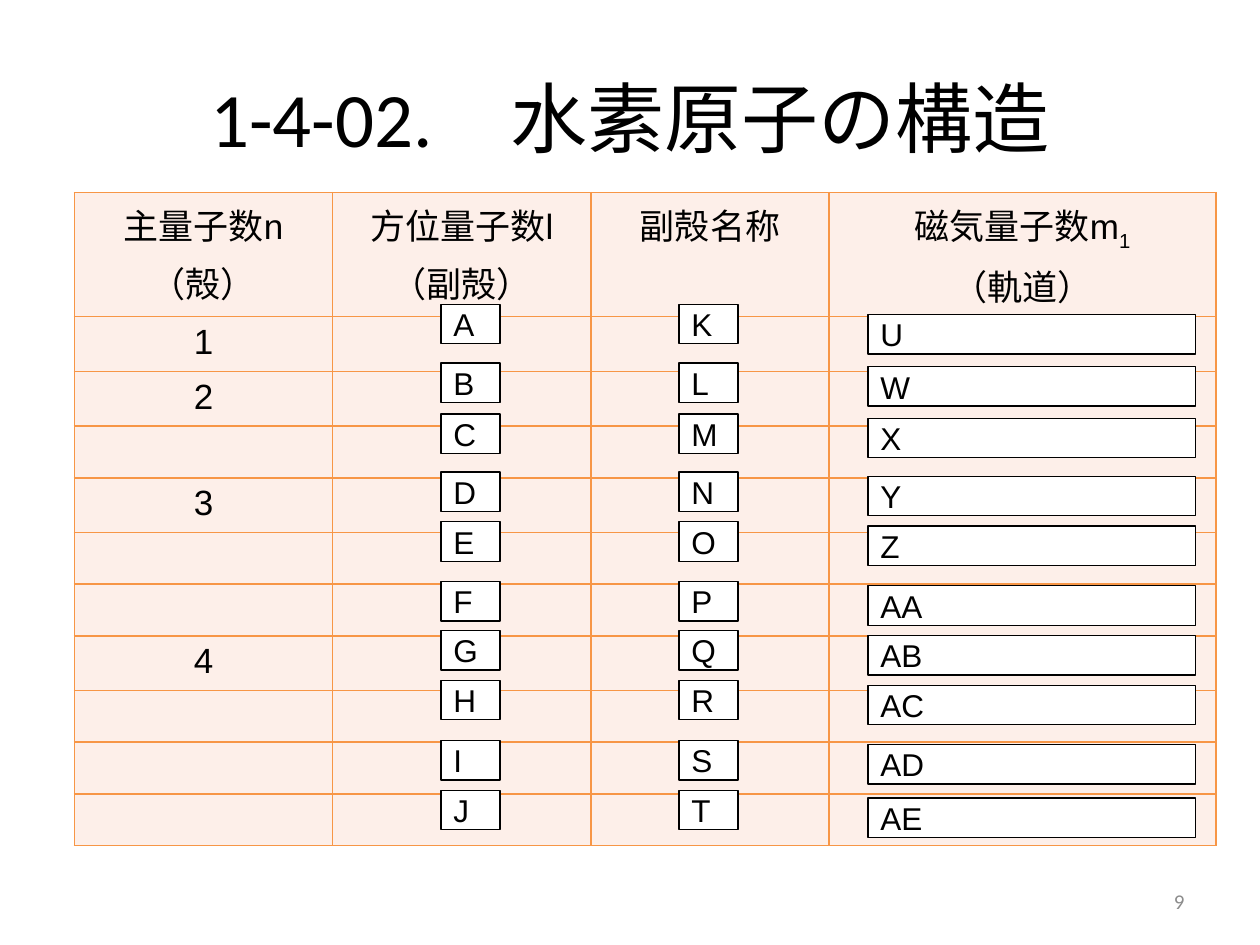
from lxml import etree
from pptx import Presentation
from pptx.dml.color import RGBColor
from pptx.enum.shapes import MSO_SHAPE
from pptx.enum.text import MSO_ANCHOR, PP_ALIGN
from pptx.oxml.ns import qn
from pptx.util import Pt

RECTANGLE = MSO_SHAPE.RECTANGLE
MIDDLE = MSO_ANCHOR.MIDDLE
LEFT, CENTER, RIGHT = PP_ALIGN.LEFT, PP_ALIGN.CENTER, PP_ALIGN.RIGHT
TITLE_ONLY = 5

BLACK, WHITE, GRAY = "000000", "FFFFFF", "8C8C8C"
CELL_FILL, CELL_BORDER = "FDEFE9", "F79646"

COLUMN_WIDTHS = [147.6, 147.6, 136.1, 221]
HEADER_HEIGHT, ROW_HEIGHT, ROW_COUNT = 71, 29.55, 10
HEADERS = ["主量子数n\n（殻）", "方位量子数l\n（副殻）", "副殻名称", "磁気量子数m_1\n（軌道）"]
SHELL_ROWS = {1: "1", 2: "2", 4: "3", 7: "4"}

BOX_HEIGHT = 22.5
SUBSHELL_TOPS = [174, 207.4, 236.6, 269.8, 298.2, 332.4, 360.4, 388.8, 423.2, 451.6]
ORBITAL_TOPS = [179.8, 209.6, 239, 272.2, 300.6, 334.8, 363.2, 391.6, 425.5, 456]
ANSWER_COLUMNS = [
    (252, 33.8, SUBSHELL_TOPS, list("ABCDEFGHIJ")),
    (388, 33.8, SUBSHELL_TOPS, list("KLMNOPQRST")),
    (496, 187.2, ORBITAL_TOPS, ["U", "W", "X", "Y", "Z", "AA", "AB", "AC", "AD", "AE"]),
]


def color(hex_string):
    """Return the colour for a hex string."""
    return RGBColor.from_string(hex_string)


def write_text(frame, text, size, font="Arial", fill=BLACK, align=LEFT, gap=0):
    """Write lines of text, with an underscore marking a subscript ending."""
    for index, line in enumerate(text.split("\n")):
        paragraph = frame.add_paragraph() if index else frame.paragraphs[0]
        paragraph.alignment = align
        if index:
            paragraph.space_before = Pt(gap)
        for part_index, part in enumerate(line.split("_")):
            run = paragraph.add_run()
            run.text = part
            run.font.size = Pt(size)
            run.font.name = font
            run.font.color.rgb = color(fill)
            if part_index:
                run._r.get_or_add_rPr().set("baseline", "-25000")


def add_borders(cell, hex_string, width):
    """Draw a solid line on all four sides of a cell."""
    properties = cell._tc.get_or_add_tcPr()
    for index, side in enumerate(("lnL", "lnR", "lnT", "lnB")):
        line = etree.Element(qn(f"a:{side}"), w=str(Pt(width)))
        solid = etree.SubElement(line, qn("a:solidFill"))
        etree.SubElement(solid, qn("a:srgbClr"), val=hex_string)
        properties.insert(index, line)


def add_title(slide, left, top, width, height):
    """Place and format the slide title."""
    title = slide.shapes.title
    title.left, title.top, title.width, title.height = map(Pt, (left, top, width, height))
    title.text_frame.vertical_anchor = MIDDLE
    write_text(title.text_frame, "1-4-02.　水素原子の構造", 44, font="Calibri", align=CENTER)


def add_page_number(slide, left, top, width, height):
    """Place the page number."""
    shape = slide.shapes.add_textbox(*map(Pt, (left, top, width, height)))
    shape.text_frame.word_wrap = True
    shape.text_frame.vertical_anchor = MIDDLE
    write_text(shape.text_frame, "9", 12, font="Calibri", fill=GRAY, align=RIGHT)


def add_quantum_table(slide, left, top):
    """Build the table of quantum numbers."""
    height = HEADER_HEIGHT + ROW_COUNT * ROW_HEIGHT
    box = map(Pt, (left, top, sum(COLUMN_WIDTHS), height))
    table = slide.shapes.add_table(ROW_COUNT + 1, len(COLUMN_WIDTHS), *box).table
    table.first_row = table.horz_banding = False
    for column, width in zip(table.columns, COLUMN_WIDTHS):
        column.width = Pt(width)
    for row_index, row in enumerate(table.rows):
        row.height = Pt(ROW_HEIGHT if row_index else HEADER_HEIGHT)
        texts = [SHELL_ROWS.get(row_index, ""), "", "", ""] if row_index else HEADERS
        for cell, text in zip(row.cells, texts):
            cell.fill.solid()
            cell.fill.fore_color.rgb = color(CELL_FILL)
            add_borders(cell, CELL_BORDER, 1)
            if text:
                write_text(cell.text_frame, text, 20, align=CENTER, gap=4)


def add_answer_box(slide, label, left, top, width, height):
    """Add one outlined answer box with its label."""
    shape = slide.shapes.add_shape(RECTANGLE, *map(Pt, (left, top, width, height)))
    shape.shadow.inherit = False
    shape.fill.solid()
    shape.fill.fore_color.rgb = color(WHITE)
    shape.line.color.rgb = color(BLACK)
    shape.line.width = Pt(0.75)
    shape.text_frame.word_wrap = True
    shape.text_frame.vertical_anchor = MIDDLE
    write_text(shape.text_frame, label, 18)


def add_answer_column(slide, left, width, tops, labels):
    """Stack the answer boxes of one table column."""
    for top, label in zip(tops, labels):
        add_answer_box(slide, label, left, top, width, BOX_HEIGHT)


def main():
    """Build and save the presentation."""
    presentation = Presentation()
    presentation.slide_width, presentation.slide_height = Pt(720), Pt(540)
    slide = presentation.slides.add_slide(presentation.slide_layouts[TITLE_ONLY])
    add_title(slide, 36, 21.6, 648, 90)
    add_page_number(slide, 516, 500.5, 168, 28.8)
    add_quantum_table(slide, 42.5, 110)
    for answer_column in ANSWER_COLUMNS:
        add_answer_column(slide, *answer_column)
    presentation.save("out.pptx")


if __name__ == "__main__":
    main()
